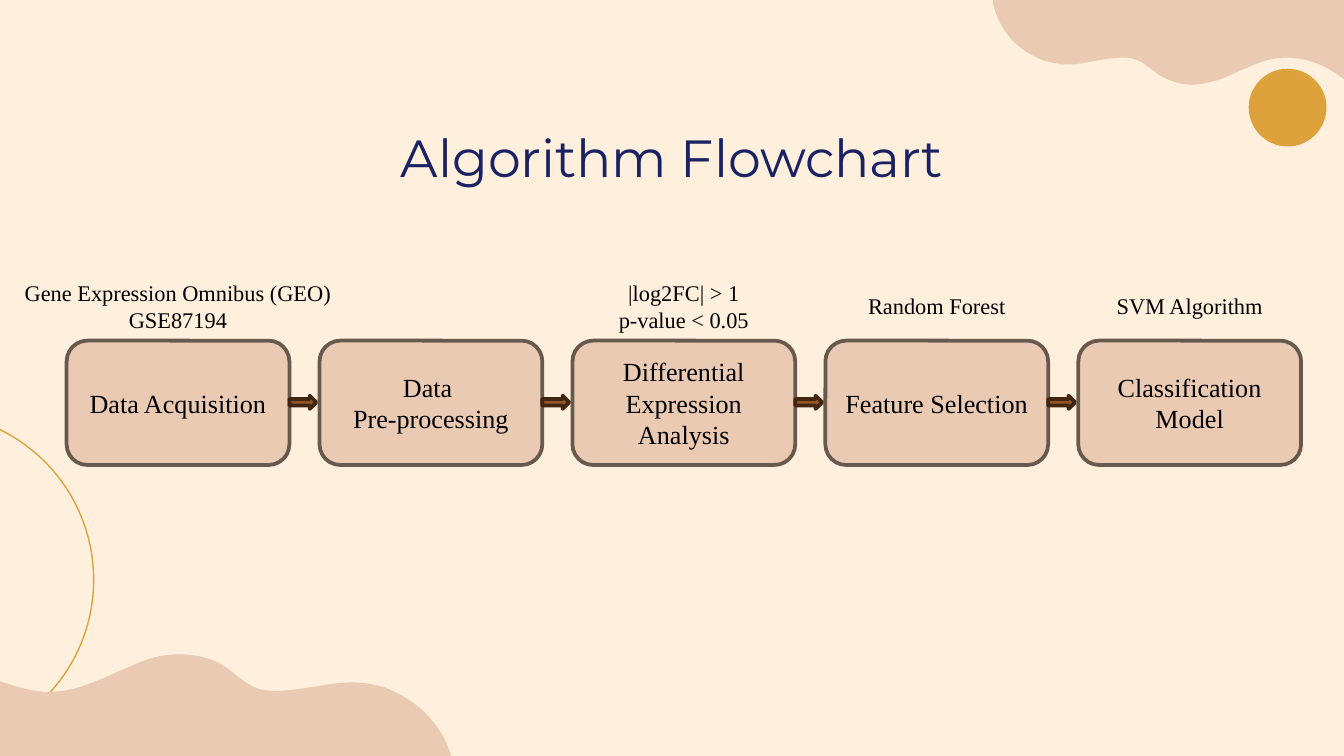
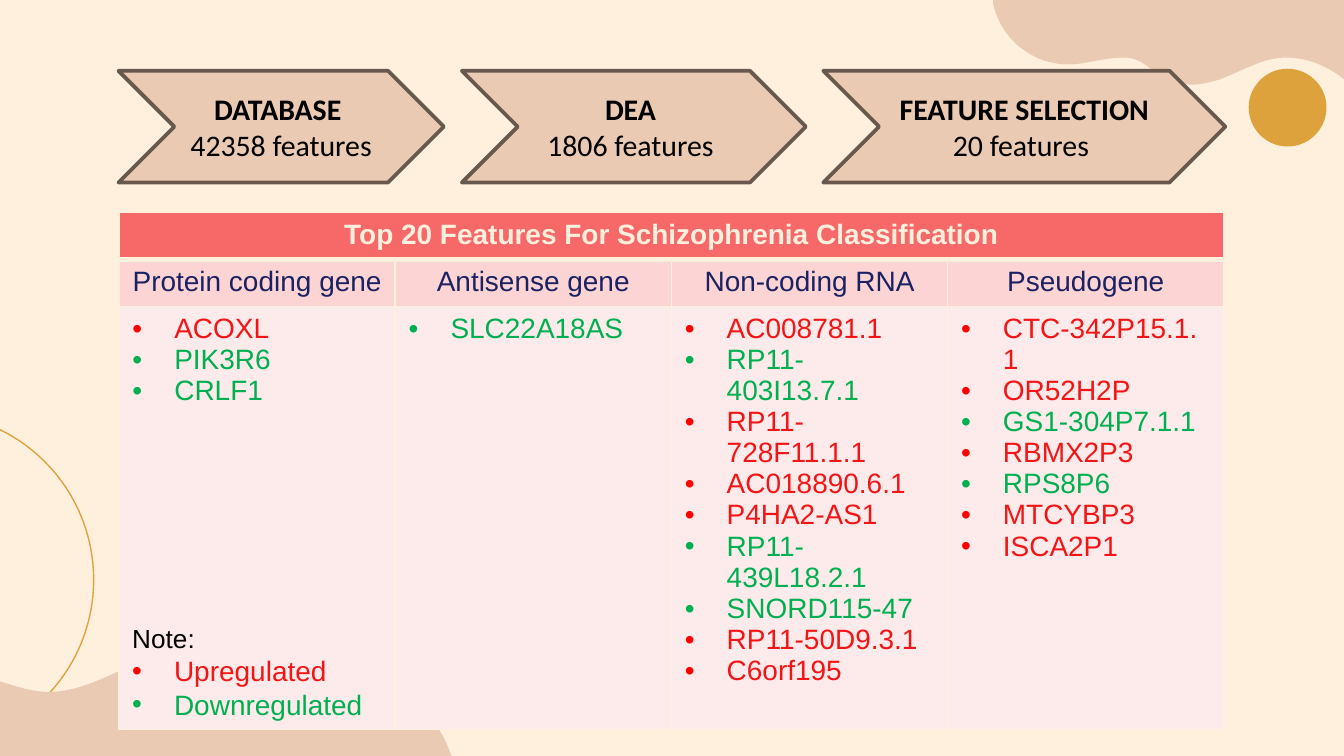
from lxml.etree import SubElement
from pptx import Presentation
from pptx.dml.color import RGBColor
from pptx.enum.shapes import MSO_SHAPE
from pptx.enum.text import MSO_ANCHOR, MSO_AUTO_SIZE, PP_ALIGN
from pptx.oxml import parse_xml
from pptx.oxml.ns import nsdecls, qn
from pptx.util import Cm, Pt

tones = {
    "cream": "FFF0DE", "sand": "EBCAB3", "gold": "DEA23C", "navy": "1A2263",
    "edge": "67594E", "brown": "945526", "dark": "412511", "black": "000000",
    "coral": "F76868", "pink": "FCD4D4", "pale": "FDEBEB",
    "up": "F31515", "down": "00B050", "dot": "FF0000",
}
rgb = {name: RGBColor.from_string(code) for name, code in tones.items()}


def draw(slide, kind, box, fill=None, line=None, width=2):
    """Add a preset shape; box is left, top, width, height in cm."""
    shape = slide.shapes.add_shape(kind, *map(Cm, box))
    shape.shadow.inherit = False
    if fill:
        shape.fill.solid()
        shape.fill.fore_color.rgb = rgb[fill]
    else:
        shape.fill.background()
    shape.line.color.rgb = rgb[line]
    shape.line.width = Pt(width)
    return shape


def write(frame, lines, font, size, tone="black", align=PP_ALIGN.CENTER):
    """Fill a text frame, one paragraph per line, in a single style."""
    frame.text = "\n".join(lines)
    for para in frame.paragraphs:
        para.alignment = align
        for run in para.runs:
            run.font.name = font
            run.font.size = Pt(size)
            run.font.color.rgb = rgb[tone]


deck = Presentation()
deck.slide_width, deck.slide_height = Cm(25.4), Cm(14.29)
back = deck.slide_master.background.fill
back.solid()
back.fore_color.rgb = rgb["cream"]
flow, top = [deck.slides.add_slide(deck.slide_layouts[6]) for _ in range(2)]

# Shared decoration: fill, straight corners, then a chain of cubic curves
blobs = [
    ("sand", [(18.77, 0), (25.4, 0)], [
        (25.4, 1.5), (25.25, 1.37), (25.1, 1.3), (24.94, 1.22),
        (24.69, 1.12), (24.49, 1.09), (24.31, 1.09),
        (23.88, 1.09), (23.57, 1.3), (23.06, 1.5),
        (22.89, 1.55), (22.71, 1.6), (22.53, 1.6),
        (22.33, 1.6), (22.15, 1.55), (21.97, 1.45),
        (21.69, 1.3), (21.59, 1.09), (21.23, 1.09),
        (20.85, 1.09), (20.52, 1.22), (20.17, 1.22),
        (20.02, 1.22), (19.89, 1.19), (19.71, 1.14),
        (19.2, 0.94), (18.9, 0.58), (18.77, 0.08)]),
    ("gold", [], [
        (24.33, 1.3), (23.93, 1.3), (23.6, 1.63), (23.6, 2.03),
        (23.6, 2.44), (23.93, 2.77), (24.34, 2.77),
        (24.74, 2.77), (25.07, 2.44), (25.07, 2.03),
        (25.07, 1.63), (24.74, 1.3), (24.33, 1.3)]),
    ("sand", [(8.53, 14.29), (0, 14.29)], [
        (0, 12.88), (0.38, 13), (0.66, 13.08), (0.91, 13.08),
        (1.5, 13.08), (1.96, 12.8), (2.64, 12.52),
        (2.87, 12.42), (3.12, 12.37), (3.38, 12.37),
        (3.66, 12.37), (3.94, 12.42), (4.17, 12.55),
        (4.55, 12.78), (4.7, 13.06), (5.16, 13.06),
        (5.72, 13.06), (6.17, 12.9), (6.65, 12.9),
        (6.86, 12.9), (7.06, 12.93), (7.29, 13),
        (7.92, 13.26), (8.33, 13.67), (8.53, 14.29)]),
]
for slide in (flow, top):
    draw(slide, MSO_SHAPE.OVAL, (-4.55, 7.8, 6.32, 6.32), line="gold", width=0.75)
    for fill, ends, curve in blobs:
        points = [(Cm(x), Cm(y)) for x, y in ends + curve]
        pen = slide.shapes.build_freeform(*points[0])
        pen.add_line_segments(points[1:])
        blob = pen.convert_to_shape()
        blob.shadow.inherit = False
        blob.fill.solid()
        blob.fill.fore_color.rgb = rgb[fill]
        blob.line.fill.background()
        # Turn each three line segments after the corners into one curve
        nodes = list(blob._element.iter(qn("a:lnTo")))[len(ends):]
        for i in range(0, len(nodes), 3):
            bend = parse_xml(f'<a:cubicBezTo {nsdecls("a")}/>')
            nodes[i].addprevious(bend)
            for node in nodes[i:i + 3]:
                bend.append(node[0])
                node.getparent().remove(node)

# Slide 1: flowchart
title = flow.shapes.add_textbox(Cm(1.98), Cm(2.11), Cm(21.44), Cm(1.6)).text_frame
title.word_wrap = True
title.margin_top = title.margin_bottom = Cm(0.25)
write(title, ["Algorithm Flowchart"], "Montserrat", 28, "navy")

stages = [
    (["Data Acquisition"], ["Gene Expression Omnibus (GEO)", "GSE87194"], 6.38),
    (["Data ", "Pre-processing"], [], 0),
    (["Differential Expression Analysis"], ["|log2FC| > 1", "p-value < 0.05"], 3),
    (["Feature Selection"], ["Random Forest"], 3.15),
    (["Classification", "Model"], ["SVM Algorithm"], 3.33),
]
wide, pitch = 4.21, 4.78
for i, (label, note, span) in enumerate(stages):
    left = 1.26 + i * pitch
    box = draw(flow, MSO_SHAPE.ROUNDED_RECTANGLE, (left, 6.44, wide, 2.35), "sand", "edge")
    box.text_frame.vertical_anchor = MSO_ANCHOR.MIDDLE
    write(box.text_frame, label, "Times New Roman", 14)
    if i < len(stages) - 1:
        draw(flow, MSO_SHAPE.RIGHT_ARROW, (left + wide, 7.48, 0.51, 0.25),
             "brown", "dark")
    if note:
        high = 0.25 + 0.51 * len(note)
        frame = flow.shapes.add_textbox(Cm(left + (wide - span) / 2), Cm(5.78 - high / 2),
                                        Cm(span), Cm(high)).text_frame
        frame.word_wrap = False
        frame.auto_size = MSO_AUTO_SIZE.SHAPE_TO_FIT_TEXT
        write(frame, note, "Times New Roman", 12)

# Slide 2: table of features
heads = ["Protein coding gene", "Antisense gene", "Non-coding RNA", "Pseudogene"]
# + is upregulated, - is downregulated
genes = [
    "+ACOXL -PIK3R6 -CRLF1",
    "-SLC22A18AS",
    "+AC008781.1 -RP11-403I13.7.1 +RP11-728F11.1.1 +AC018890.6.1 +P4HA2-AS1 "
    "-RP11-439L18.2.1 -SNORD115-47 +RP11-50D9.3.1 +C6orf195",
    "+CTC-342P15.1.1 +OR52H2P -GS1-304P7.1.1 +RBMX2P3 -RPS8P6 +MTCYBP3 +ISCA2P1",
]
table = top.shapes.add_table(3, 4, Cm(2.25), Cm(4.01), Cm(20.88), Cm(9.66)).table
table.first_row = table.horz_banding = False
for col in table.columns:
    col.width = Cm(5.22)
for row, high in zip(table.rows, (0.83, 0.83, 8)):
    row.height = Cm(high)
for r, fill in enumerate(("coral", "pink", "pale")):
    for c in range(4):
        cell = table.cell(r, c)
        cell.fill.solid()
        cell.fill.fore_color.rgb = rgb[fill]
        for n, side in enumerate("LRTB"):
            thick = 3 if (r, side) in ((0, "B"), (1, "T")) else 1
            rule = parse_xml(
                f'<a:ln{side} {nsdecls("a")} w="{Pt(thick)}"><a:solidFill>'
                f'<a:srgbClr val="{tones["cream"]}"/></a:solidFill></a:ln{side}>')
            cell._tc.get_or_add_tcPr().insert(n, rule)
table.cell(0, 0).merge(table.cell(0, 3))
head = table.cell(0, 0).text_frame
write(head, ["Top 20 Features For Schizophrenia Classification"], "Arial", 15, "cream")
head.paragraphs[0].runs[0].font.bold = True
for c, name in enumerate(heads):
    write(table.cell(1, c).text_frame, [name], "Arial", 15, "navy")

chain = [
    (2.24, 6.15, ["DATABASE ", "42358 features "]),
    (8.73, 6.5, ["DEA ", "1806 features "]),
    (15.56, 7.6, ["FEATURE SELECTION", "20 features "]),
]
for left, span, lines in chain:
    frame = draw(top, MSO_SHAPE.CHEVRON, (left, 1.34, span, 2.11), "sand", "edge").text_frame
    frame.vertical_anchor = MSO_ANCHOR.MIDDLE
    write(frame, lines, "Calibri", 16)
    frame.paragraphs[0].runs[0].font.bold = True

key = top.shapes.add_textbox(Cm(2.25), Cm(11.64), Cm(5.69), Cm(2.13)).text_frame
key.word_wrap = True
key.auto_size = MSO_AUTO_SIZE.SHAPE_TO_FIT_TEXT

# Bulleted lists in the table and the key
lists = [(table.cell(2, c).text_frame, text.split()) for c, text in enumerate(genes)]
lists.append((key, ["Note:", "+Upregulated", "-Downregulated"]))
marks = {"+": ("up", "dot"), "-": ("down", "down")}
for frame, items in lists:
    write(frame, [item.lstrip("+-") for item in items], "Arial", 15, align=PP_ALIGN.LEFT)
    for para, item in zip(frame.paragraphs, items):
        font = para.runs[0].font
        if item[0] not in marks:
            font.size = Pt(14)
            continue
        tone, dot = marks[item[0]]
        font.color.rgb = rgb[tone]
        props = para._p.get_or_add_pPr()
        props.set("marL", str(Cm(0.79)))
        props.set("indent", str(-Cm(0.79)))
        tint = SubElement(props, qn("a:buClr"))
        SubElement(tint, qn("a:srgbClr"), val=tones[dot])
        SubElement(props, qn("a:buFont"), typeface="Arial")
        SubElement(props, qn("a:buChar"), char="•")

deck.save("out.pptx")
